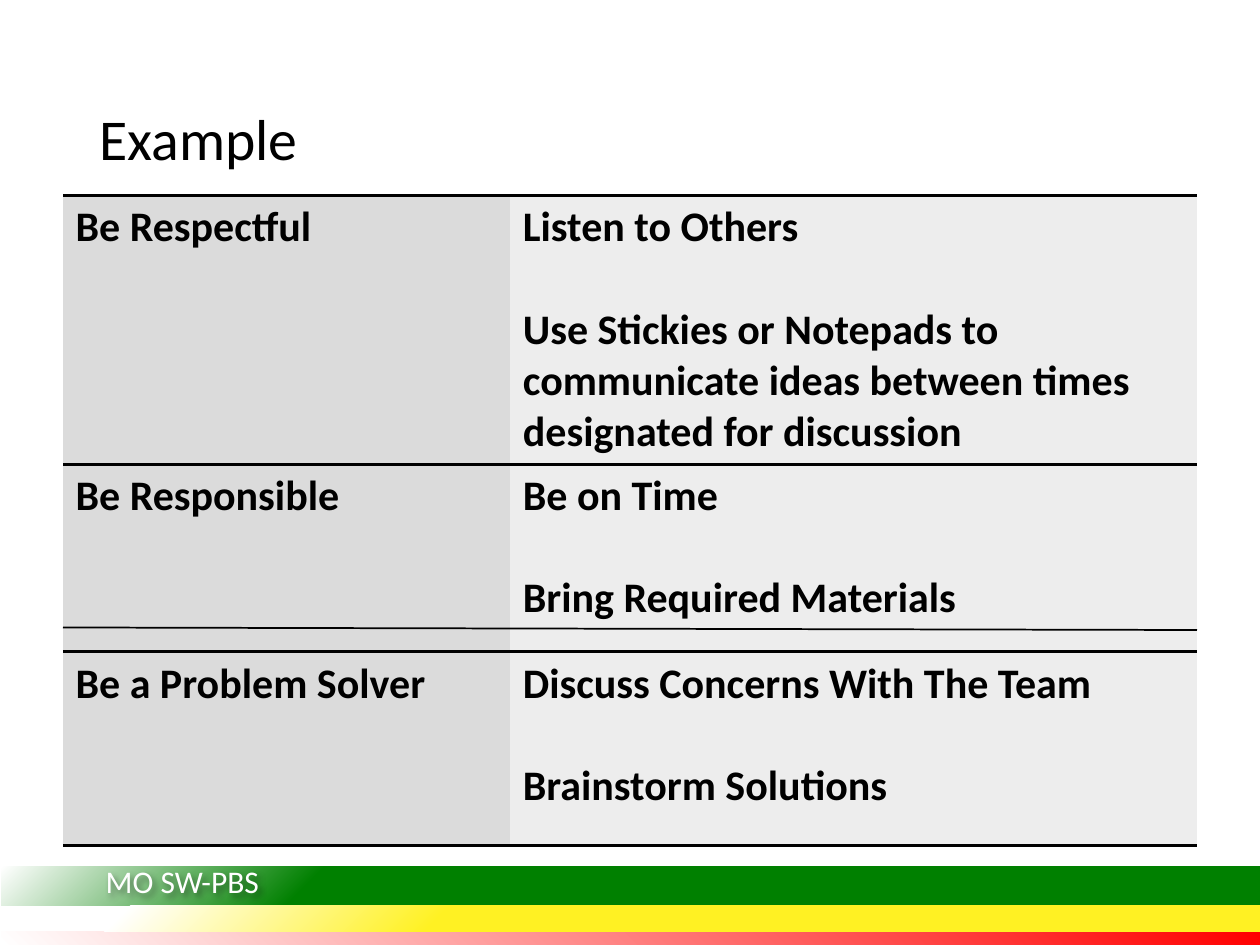
import pptx
import pptx.util
import pptx.oxml
import pptx.oxml.ns
import pptx.dml.color
import pptx.enum.shapes
import pptx.enum.text

Inches = pptx.util.Inches
Pt = pptx.util.Pt
NS = pptx.oxml.ns.nsdecls("a")
PLAIN = "{2D5ABB26-0587-4C30-8999-92F81FD0307C}"
HEX = {"ink": "000000", "label": "DBDBDB", "detail": "EDEDED", "white": "FFFFFF",
       "green": "008000", "yellow": "FFF123", "red": "FF0000"}
ROWS = [
    (2.13, ["Be Respectful"],
     ["Listen to Others",
      "Use Stickies or Notepads to communicate ideas between times designated for discussion"], "lnT"),
    (1.49, ["Be Responsible"], ["Be on Time", "Bring Required Materials"], "lnT"),
    (1.54, ["Be a Problem Solver"],
     ["Discuss Concerns With The Team", "Brainstorm Solutions"], "lnB"),
]
STRIPES = [
    (0.6, 0.12, [(0, "red"), (100, "white")], 'l="100000" b="100000"'),
    (0.09, 0.31, [(0, "green"), (75, "green"), (100, "white")], 'l="100000" t="100000"'),
    (0.4, 0.2, [(0, "yellow"), (65, "yellow"), (90, "white"), (100, "white")],
     'l="100000" t="100000"'),
]


def shade(name):
    """Return the named colour."""
    return pptx.dml.color.RGBColor.from_string(HEX[name])


def style(item, values):
    """Set each attribute of an item from a dict."""
    for key, value in values.items():
        setattr(item, key, value)


def write(frame, lines, size, tint="ink", bold=False, gap=0):
    """Fill a text frame with one paragraph per line."""
    for index, line in enumerate(lines):
        para = frame.add_paragraph() if index else frame.paragraphs[0]
        style(para, {"alignment": pptx.enum.text.PP_ALIGN.LEFT,
                     "space_before": Pt(gap if index else 0)})
        run = para.add_run()
        run.text = line
        style(run.font, {"name": "Calibri", "size": Pt(size), "bold": bold})
        run.font.color.rgb = shade(tint)


def head(slide, left, top, width, height):
    """Place the slide title."""
    title = slide.shapes.title
    style(title, {"left": Inches(left), "top": Inches(top),
                  "width": Inches(width), "height": Inches(height)})
    style(title.text_frame, {"vertical_anchor": pptx.enum.text.MSO_ANCHOR.MIDDLE,
                             "auto_size": pptx.enum.text.MSO_AUTO_SIZE.NONE})
    write(title.text_frame, ["Example"], 33)
    title.text_frame.paragraphs[0].line_spacing = 0.9


def edge(cell, side):
    """Draw a black border on one side of a cell."""
    cell._tc.get_or_add_tcPr().insert(0, pptx.oxml.parse_xml(
        f'<a:{side} {NS} w="25400"><a:solidFill><a:srgbClr val="{HEX["ink"]}"/>'
        f'</a:solidFill></a:{side}>'))


def grid(slide, left, top, width):
    """Place the table of expectations and its dividing line."""
    height = sum(row[0] for row in ROWS)
    frame = slide.shapes.add_table(len(ROWS), 2, Inches(left), Inches(top),
                                   Inches(width), Inches(height))
    table = frame.table
    style(table, {"first_row": False, "horz_banding": False})
    for mark in table._tbl.iter(pptx.oxml.ns.qn("a:tableStyleId")):
        mark.text = PLAIN
    for column, span in zip(table.columns, (3.55, width - 3.55)):
        column.width = Inches(span)
    for row, (tall, label, detail, side) in enumerate(ROWS):
        table.rows[row].height = Inches(tall)
        for col, (tint, lines) in enumerate((("label", label), ("detail", detail))):
            cell = table.cell(row, col)
            cell.fill.solid()
            cell.fill.fore_color.rgb = shade(tint)
            write(cell.text_frame, lines, 24, bold=True, gap=29.3)
            edge(cell, side)
    line = slide.shapes.add_connector(
        pptx.enum.shapes.MSO_CONNECTOR.STRAIGHT, Inches(left), Inches(top + 3.43),
        Inches(left + width), Inches(top + 3.45))
    line.line.width = Pt(1)
    line.line.color.rgb = shade("ink")
    line._element.spPr.append(pptx.oxml.parse_xml(f"<a:effectLst {NS}/>"))


def blend(shape, stops, focus):
    """Give a shape a radial gradient."""
    marks = "".join(f'<a:gs pos="{pos * 1000}"><a:srgbClr val="{HEX[name]}"/></a:gs>'
                    for pos, name in stops)
    shape.fill.background()
    props = shape._element.spPr
    old = props.find(pptx.oxml.ns.qn("a:noFill"))
    props.replace(old, pptx.oxml.parse_xml(
        f'<a:gradFill {NS} rotWithShape="1"><a:gsLst>{marks}</a:gsLst>'
        f'<a:path path="circle"><a:fillToRect {focus}/></a:path></a:gradFill>'))


def foot(slide, left, top, width):
    """Place the striped footer and its label."""
    group = slide.shapes.add_group_shape()
    for drop, tall, stops, focus in STRIPES:
        bar = group.shapes.add_shape(
            pptx.enum.shapes.MSO_SHAPE.RECTANGLE, Inches(left), Inches(top + drop),
            Inches(width), Inches(tall))
        blend(bar, stops, focus)
        bar.line.fill.background()
        bar.shadow.inherit = False
    label = group.shapes.add_textbox(Inches(left + 0.73), Inches(top),
                                     Inches(1.92), Inches(0.4))
    label.text_frame.word_wrap = True
    write(label.text_frame, ["MO SW-PBS"], 18, "white")
    label._element.spPr.append(pptx.oxml.parse_xml(
        f'<a:effectLst {NS}><a:outerShdw blurRad="50800" dist="38100" dir="2700000">'
        f'<a:srgbClr val="{HEX["ink"]}"><a:alpha val="40000"/></a:srgbClr>'
        '</a:outerShdw></a:effectLst>'))


def main():
    """Build and save the slide."""
    deck = pptx.Presentation()
    style(deck, {"slide_width": Inches(10), "slide_height": Inches(7.5)})
    slide = deck.slides.add_slide(deck.slide_layouts[5])
    head(slide, 0.69, 0.4, 8.62, 1.45)
    grid(slide, 0.5, 1.55, 9)
    foot(slide, 0.01, 6.79, 10)
    deck.save("out.pptx")


if __name__ == "__main__":
    main()
